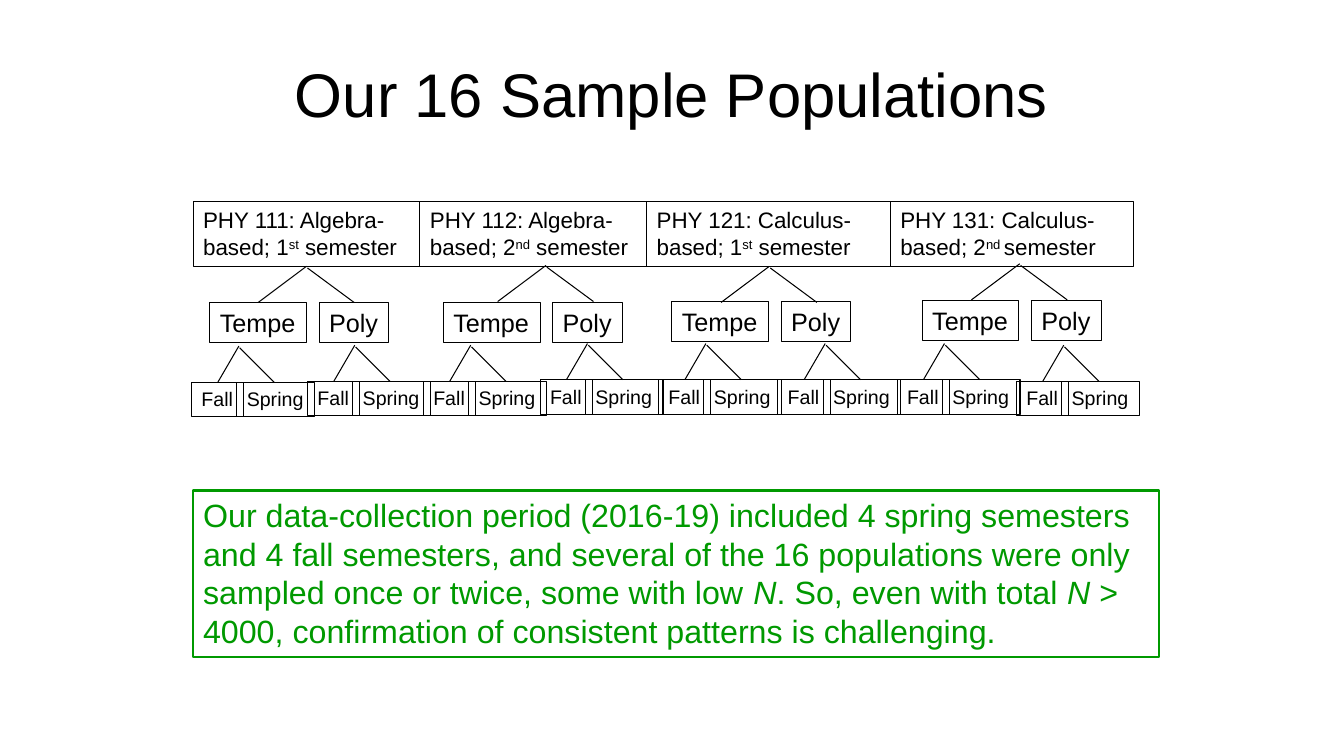
from lxml import etree
from pptx import Presentation
from pptx.dml.color import RGBColor
from pptx.enum.shapes import MSO_CONNECTOR, MSO_SHAPE
from pptx.enum.text import MSO_ANCHOR, MSO_AUTO_SIZE, PP_ALIGN
from pptx.oxml.ns import qn
from pptx.util import Inches, Pt

RECTANGLE, STRAIGHT = MSO_SHAPE.RECTANGLE, MSO_CONNECTOR.STRAIGHT
CENTER, LEFT = PP_ALIGN.CENTER, PP_ALIGN.LEFT
MIDDLE, TOP = MSO_ANCHOR.MIDDLE, MSO_ANCHOR.TOP
FIT_SHAPE, NO_FIT = MSO_AUTO_SIZE.SHAPE_TO_FIT_TEXT, MSO_AUTO_SIZE.NONE

# Grid of 160 columns by 90 rows, twelve cells to the inch
CELLS_PER_INCH = 12
FONT, BLACK, GREEN = "Arial", "000000", "009900"

# Course label, ordinal, gap in superscript, rest of the label
COURSES = [
    ("PHY 111: Algebra-based; 1", "st", " semester"),
    ("PHY 112: Algebra-based; 2", "nd", " semester"),
    ("PHY 121: Calculus-based; 1", "st", " semester"),
    ("PHY 131: Calculus-based; 2", "nd ", "semester"),
]
COURSE_EDGES = [23, 50, 77, 106, 135]
COURSE_APEXES = [(36.5, 31.7), (65, 31.6), (91.6, 31.7), (121.4, 31.4)]
CAMPUS_CORNERS = [(25, 36), (52.8, 36), (80, 35.9), (109.8, 35.8)]
SEMESTER_CORNERS = [
    (22.8, 45.5), (36.6, 45.4), (50.4, 45.4), (64.3, 45.2),
    (78.4, 45.2), (92.6, 45.2), (106.8, 45.2), (121, 45.4),
]

# Label, offset from the pair's corner, width
CAMPUSES = [("Tempe", 0, 11.5), ("Poly", 13, 8.3)]
SEMESTERS = [("Fall", 0, 6.24), ("Spring", 5.4, 9.24)]

FINDING = [
    ("Our data-collection period (2016-19) included 4 spring semesters and "
     "4 fall semesters, and several of the 16 populations were only sampled "
     "once or twice, some with low ", ""),
    ("N", "italic"),
    (". So, even with total ", ""),
    ("N", "italic"),
    (" > 4000, confirmation of consistent patterns is challenging.", ""),
]


def cells(count):
    return Inches(count / CELLS_PER_INCH)


def rgb(hex_code):
    return RGBColor.from_string(hex_code)


def write(frame, pieces, size, color, align=LEFT, anchor=TOP):
    """Write (text, style) pieces as one paragraph."""
    frame.vertical_anchor = anchor
    paragraph = frame.paragraphs[0]
    paragraph.alignment = align
    for words, style in pieces:
        run = paragraph.add_run()
        run.text = words
        run.font.name, run.font.size = FONT, Pt(size)
        run.font.color.rgb = rgb(color)
        if style == "italic":
            run.font.italic = True
        elif style == "superscript":
            run.font._element.set("baseline", "30000")


def add_box(shapes, left, top, width, height, pieces, size,
            color=BLACK, weight=0.75, wrap=True):
    box = shapes.add_shape(RECTANGLE, cells(left), cells(top),
                           cells(width), cells(height))
    box.shadow.inherit = False
    box.fill.background()
    box.line.color.rgb = rgb(color)
    box.line.width = Pt(weight)
    box.text_frame.word_wrap = wrap
    box.text_frame.auto_size = FIT_SHAPE
    write(box.text_frame, pieces, size, color)


def add_branch(shapes, start, end):
    branch = shapes.add_connector(STRAIGHT, *map(cells, start + end))
    branch.line.color.rgb = rgb(BLACK)
    branch.line.width = Pt(0.75)
    etree.SubElement(branch._element.spPr, qn("a:effectLst"))


def add_fork(shapes, apex, left_reach, right_reach, drop=4.3):
    x, y = apex
    add_branch(shapes, (x, y), (x - left_reach, y + drop))
    add_branch(shapes, (x + 0.1, y + 0.2), (x + right_reach, y + drop))


def add_pair(shapes, corner, labels, height, size):
    left, top = corner
    for label, offset, width in labels:
        add_box(shapes, left + offset, top, width, height,
                [(label, "")], size, wrap=False)


def add_title(slide, words):
    title = slide.shapes.title
    title.left, title.top = cells(8), cells(3.6)
    title.width, title.height = cells(144), cells(15)
    title.text_frame.auto_size = NO_FIT
    write(title.text_frame, [(words, "")], 44, BLACK, CENTER, MIDDLE)


def main():
    deck = Presentation()
    deck.slide_width, deck.slide_height = cells(160), cells(90)
    slide = deck.slides.add_slide(deck.slide_layouts[5])
    add_title(slide, "Our 16 Sample Populations")

    # Courses
    for (label, ordinal, rest), left, right in zip(
            COURSES, COURSE_EDGES, COURSE_EDGES[1:]):
        pieces = [(label, ""), (ordinal, "superscript"), (rest, "")]
        add_box(slide.shapes, left, 24, right - left, 7.68, pieces, 16)

    # Campuses under each course
    for apex, corner in zip(COURSE_APEXES, CAMPUS_CORNERS):
        campuses = slide.shapes.add_group_shape().shapes
        add_pair(campuses, corner, CAMPUSES, 4.8, 18)
        add_fork(campuses, apex, 5.75, 5.65)

    # Semesters under each campus
    for left, top in SEMESTER_CORNERS:
        semesters = slide.shapes.add_group_shape().shapes
        add_pair(semesters, (left, top), SEMESTERS, 4.1, 14)
        add_fork(semesters, (left + 5.64, top - 4.3), 2.5, 4.2)

    # Finding
    add_box(slide.shapes, 23, 58.4, 115, 19.8, FINDING, 23, GREEN, 1.5)
    deck.save("out.pptx")


if __name__ == "__main__":
    main()
